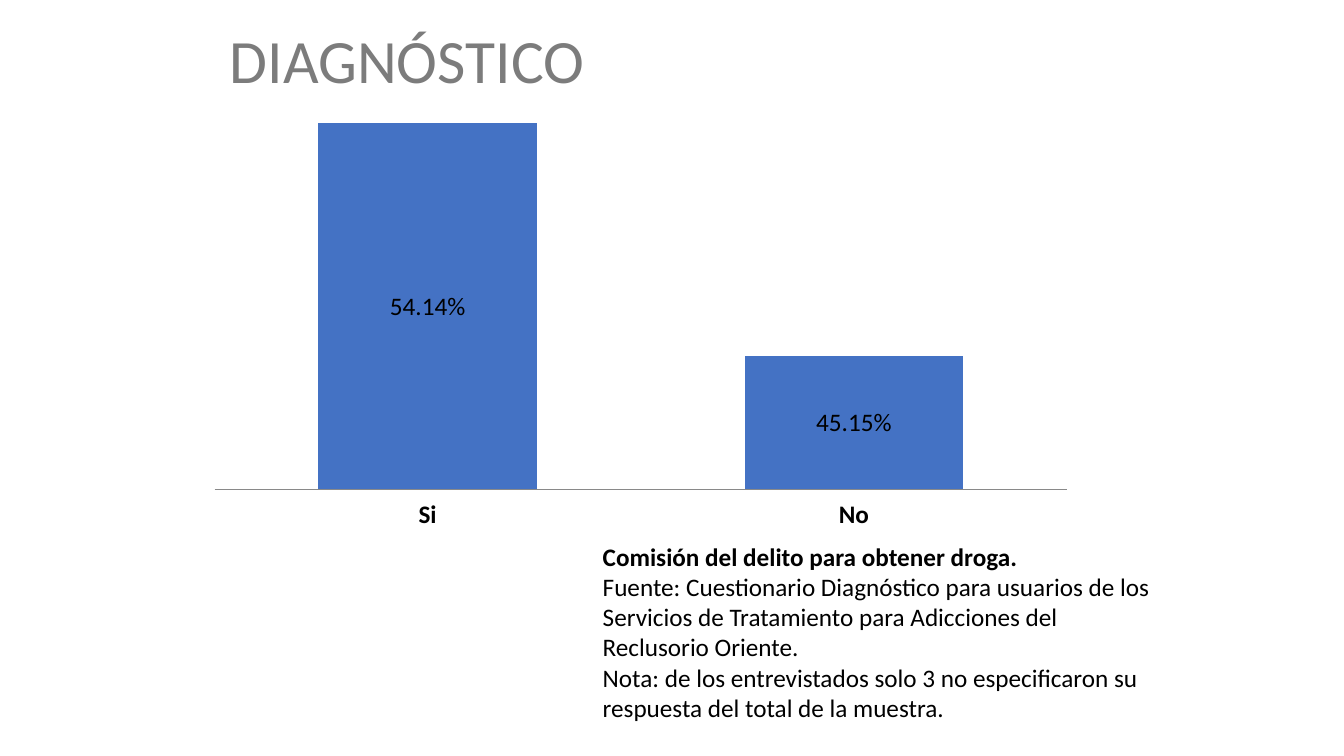
from lxml import etree
from pptx import Presentation
from pptx.chart.data import CategoryChartData
from pptx.dml.color import RGBColor
from pptx.enum.chart import XL_CHART_TYPE as ChartType, XL_LABEL_POSITION as LabelPos
from pptx.enum.chart import XL_TICK_LABEL_POSITION as TickLabelPos, XL_TICK_MARK as TickMark
from pptx.enum.text import MSO_ANCHOR as Anchor, MSO_AUTO_SIZE as AutoSize, PP_ALIGN as Align
from pptx.oxml import parse_xml
from pptx.oxml.ns import nsdecls, qn
from pptx.util import Cm, Pt

GREY = RGBColor(0x7C, 0x7C, 0x7C)
AXIS_GREY = RGBColor(0x89, 0x89, 0x89)
BLUE = RGBColor(0x44, 0x72, 0xC4)
BLACK = RGBColor(0, 0, 0)
PERCENT = "0.00%"


class SlideBuilder:
    font = "Calibri"
    body_size = 18

    def __init__(self, slide):
        self.s = slide

    def style(self, font, size, color=BLACK, bold=False):
        font.name = self.font
        font.size = Pt(size)
        font.bold = bold
        font.color.rgb = color

    def add_run(self, p, text, size, color=BLACK, bold=False):
        r = p.add_run()
        r.text = text
        self.style(r.font, size, color, bold)

    def title(self, text, left, top, width, height):
        sp = self.s.shapes.title
        sp.left, sp.top, sp.width, sp.height = map(Cm, (left, top, width, height))
        tf = sp.text_frame
        tf.vertical_anchor = Anchor.MIDDLE
        p = tf.paragraphs[0]
        p.alignment = Align.LEFT
        p.line_spacing = 0.9
        self.add_run(p, text, 44, GREY)

    def column_chart(self, values, low, high, left, top, width, height):
        data = CategoryChartData(number_format=PERCENT)
        data.categories = list(values)
        data.add_series("Series 1", values.values())
        box = map(Cm, (left, top, width, height))
        chart = self.s.shapes.add_chart(ChartType.COLUMN_STACKED, *box, data).chart
        self.style(chart.font, 10)
        chart.has_legend = False
        chart.has_title = False

        value_axis = chart.value_axis
        value_axis.minimum_scale, value_axis.maximum_scale = low, high
        value_axis.has_major_gridlines = False
        value_axis.visible = False

        category_axis = chart.category_axis
        category_axis.major_tick_mark = TickMark.NONE
        category_axis.tick_label_position = TickLabelPos.LOW
        category_axis.format.line.color.rgb = AXIS_GREY
        self.style(category_axis.tick_labels.font, self.body_size, bold=True)

        plot = chart.plots[0]
        plot.gap_width, plot.overlap = 95, 100
        plot.vary_by_categories = False
        fill = plot.series[0].format.fill
        fill.solid()
        fill.fore_color.rgb = BLUE
        plot.has_data_labels = True
        labels = plot.data_labels
        labels.show_value = True
        labels.number_format = PERCENT
        labels.number_format_is_linked = False
        labels.position = LabelPos.CENTER
        self.style(labels.font, self.body_size)
        self.place_plot(chart, x=0.03, y=0.03, w=0.94, h=0.83)

    def place_plot(self, chart, **box):
        area = chart.element.find(".//" + qn("c:plotArea"))
        for old in area.findall(qn("c:layout")):
            area.remove(old)
        layout = parse_xml(f"<c:layout {nsdecls('c')}><c:manualLayout/></c:layout>")
        settings = {"layoutTarget": "inner", "xMode": "edge", "yMode": "edge", **box}
        for tag, value in settings.items():
            etree.SubElement(layout[0], qn("c:" + tag)).set("val", str(value))
        area.insert(0, layout)

    def text(self, paragraphs, left, top, width, height):
        sp = self.s.shapes.add_textbox(*map(Cm, (left, top, width, height)))
        tf = sp.text_frame
        tf.word_wrap = True
        tf.auto_size = AutoSize.SHAPE_TO_FIT_TEXT
        for i, (text, bold) in enumerate(paragraphs):
            p = tf.add_paragraph() if i else tf.paragraphs[0]
            self.add_run(p, text, self.body_size, bold=bold)


def main():
    prs = Presentation()
    prs.slide_width, prs.slide_height = Cm(33.87), Cm(19.05)
    builder = SlideBuilder(prs.slides.add_slide(prs.slide_layouts[5]))
    builder.title("DIAGNÓSTICO", 5.54, 0, 22.86, 3.18)
    builder.column_chart({"Si": 0.5414, "No": 0.4515}, 0.4, 0.56, 4.72, 1.52, 22.86, 12.57)
    builder.text([
        ("Comisión del delito para obtener droga.", True),
        ("Fuente: Cuestionario Diagnóstico para usuarios de los Servicios de "
         "Tratamiento para Adicciones del Reclusorio Oriente.", False),
        ("Nota: de los entrevistados solo 3 no especificaron su respuesta "
         "del total de la muestra.", False),
    ], 14.94, 13.51, 14.35, 4.88)
    prs.save("out.pptx")


if __name__ == "__main__":
    main()
